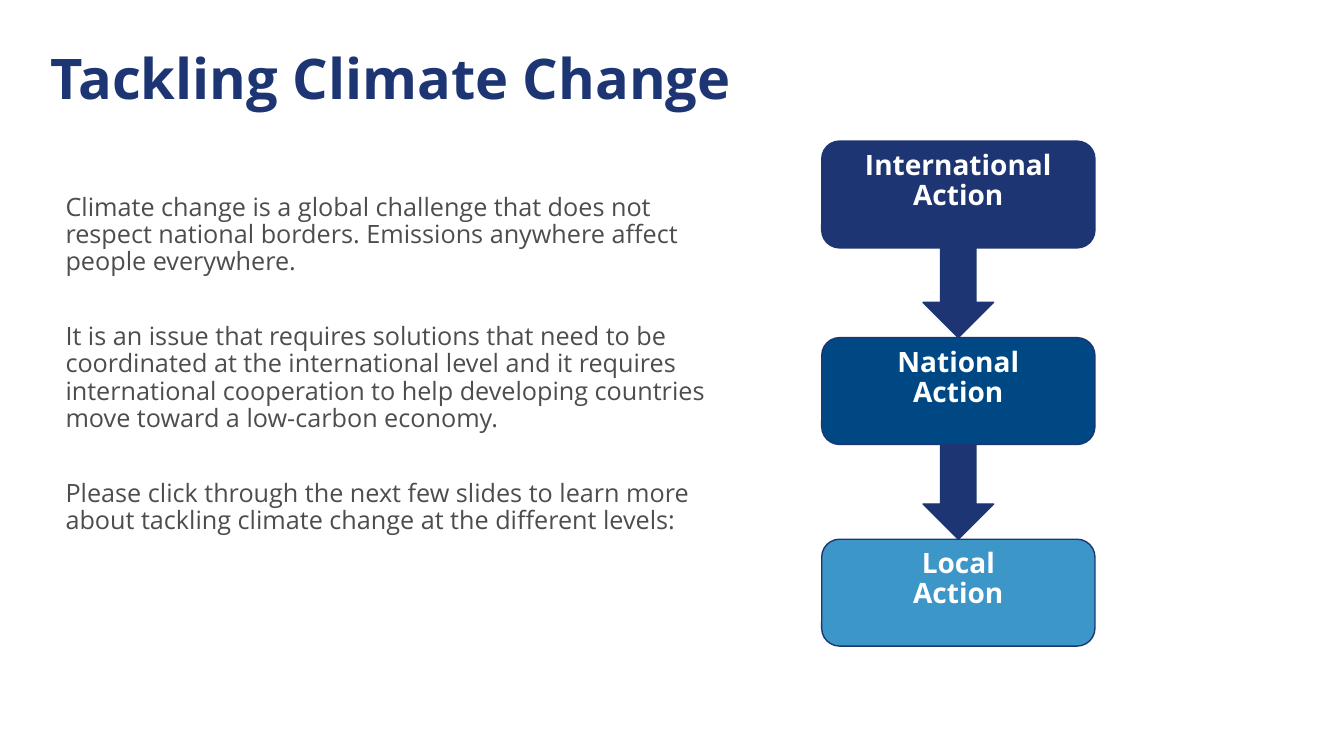
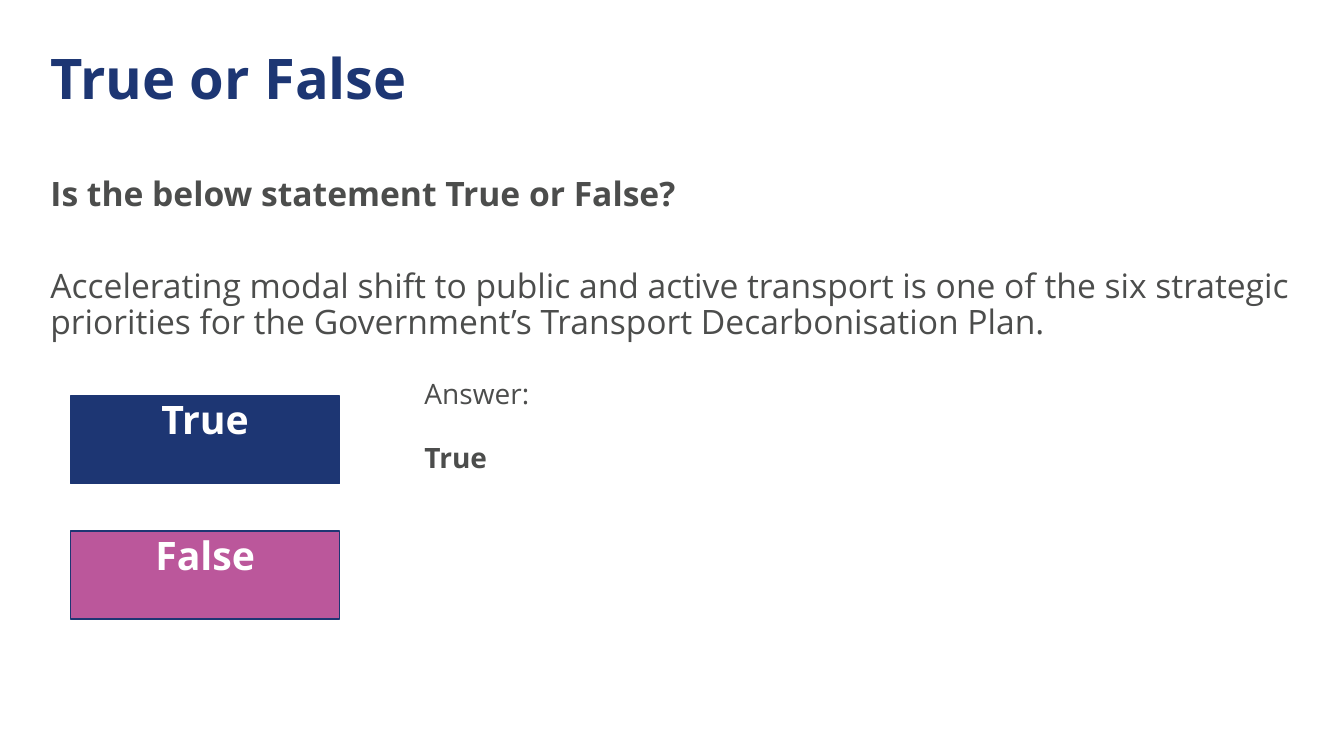
from dataclasses import dataclass

from pptx import Presentation
from pptx.dml.color import RGBColor
from pptx.enum.shapes import MSO_SHAPE as Shape
from pptx.enum.text import MSO_ANCHOR as Anchor, MSO_AUTO_SIZE as AutoSize, PP_ALIGN as Align
from pptx.oxml.xmlchemy import OxmlElement
from pptx.util import Inches, Pt


@dataclass(frozen=True)
class Theme:
    font: str = "Open Sans"
    navy: str = "1D3673"
    blue: str = "004884"
    sky: str = "3C96C8"
    pink: str = "BB579B"
    grey: str = "4C4D4C"
    white: str = "FFFFFF"
    title_size: int = 40
    button_size: int = 28
    question_size: int = 24
    label_size: int = 20
    body_size: int = 18
    line_spacing: float = 0.9


THEME = Theme()

TITLE_BOX = (0.5, 0.51, 12.33, 1.06)

CLIMATE = {
    "title": "Tackling Climate Change",
    "box": (0.65, 1.93, 6.4, 4.2),
    "paragraphs": [
        "Climate change is a global challenge that does not respect national borders. "
        "Emissions anywhere affect people everywhere.",
        "It is an issue that requires solutions that need to be coordinated at the "
        "international level and it requires international cooperation to help "
        "developing countries move toward a low-carbon economy.",
        "Please click through the next few slides to learn more about tackling climate "
        "change at the different levels:",
    ],
    "levels": [
        (["International Action"], THEME.navy, 1.4),
        (["National", "Action"], THEME.blue, 3.35),
        (["Local", "Action"], THEME.sky, 5.35),
    ],
}
LEVEL_LEFT, LEVEL_WIDTH, LEVEL_HEIGHT = 8.15, 2.71, 1.06
ARROW_WIDTH, ARROW_HEIGHT = 0.7, 0.94

QUIZ = {
    "title": "True or False",
    "box": (0.5, 1.76, 12.33, 4.84),
    "paragraphs": [
        "Is the below statement True or False?",
        "Accelerating modal shift to public and active transport is one of the six "
        "strategic priorities for the Government’s Transport Decarbonisation Plan.",
    ],
    "buttons": [("True", THEME.navy), ("False", THEME.pink)],
    "answer": ["Answer:", "True"],
    "answer_box": (4.21, 3.77, 8.62, 2.77),
}
BUTTON_LEFT, BUTTON_TOP, BUTTON_WIDTH, BUTTON_HEIGHT = 0.7, 3.93, 2.67, 0.87
BUTTON_PITCH = 1.34


def inches(box):
    return [Inches(length) for length in box]


def write(frame, texts, size, color, align=Align.LEFT, bold=(), gap=0, margin=None):
    frame.word_wrap = True
    frame.auto_size = AutoSize.NONE
    frame.vertical_anchor = Anchor.TOP
    if margin is not None:
        frame.margin_left = frame.margin_right = Inches(margin)
        frame.margin_top = frame.margin_bottom = Inches(margin)
    for index, text in enumerate(texts):
        paragraph = frame.paragraphs[0] if index == 0 else frame.add_paragraph()
        paragraph.text = text
        paragraph.alignment = align
        paragraph.line_spacing = THEME.line_spacing
        paragraph.space_before = Pt(gap if index else 0)
        paragraph.space_after = Pt(0)
        font = paragraph.font
        font.name = THEME.font
        font.size = Pt(size)
        font.bold = index in bold
        font.color.rgb = RGBColor.from_string(color)


def place(placeholder, box):
    placeholder.left, placeholder.top, placeholder.width, placeholder.height = inches(box)


def add_slide(presentation, content, size, gap, bold=()):
    slide = presentation.slides.add_slide(presentation.slide_layouts[1])
    title, body = slide.placeholders
    place(title, TITLE_BOX)
    write(title.text_frame, [content["title"]], THEME.title_size, THEME.navy, bold=(0,), margin=0)
    place(body, content["box"])
    write(body.text_frame, content["paragraphs"], size, THEME.grey, bold=bold, gap=gap, margin=0)
    for paragraph in body.text_frame.paragraphs:
        properties = paragraph._p.get_or_add_pPr()
        properties.set("marL", "0")
        properties.set("indent", "0")
        properties.insert_element_before(
            OxmlElement("a:buNone"), "a:tabLst", "a:defRPr", "a:extLst"
        )
    return slide


def add_block(slide, kind, box, fill, texts=(), size=THEME.label_size):
    shape = slide.shapes.add_shape(kind, *inches(box))
    shape.shadow.inherit = False
    shape.fill.solid()
    shape.fill.fore_color.rgb = RGBColor.from_string(fill)
    shape.line.color.rgb = RGBColor.from_string(THEME.navy)
    shape.line.width = Pt(1)
    write(shape.text_frame, texts, size, THEME.white, Align.CENTER, bold=range(len(texts)))


def build_climate(presentation):
    slide = add_slide(presentation, CLIMATE, THEME.body_size, gap=34)
    for texts, fill, top in CLIMATE["levels"]:
        box = (LEVEL_LEFT, top, LEVEL_WIDTH, LEVEL_HEIGHT)
        add_block(slide, Shape.ROUNDED_RECTANGLE, box, fill, texts)
    arrow_left = LEVEL_LEFT + (LEVEL_WIDTH - ARROW_WIDTH) / 2
    for _, _, next_top in CLIMATE["levels"][1:]:
        box = (arrow_left, next_top - ARROW_HEIGHT, ARROW_WIDTH, ARROW_HEIGHT)
        add_block(slide, Shape.DOWN_ARROW, box, THEME.navy)


def build_quiz(presentation):
    slide = add_slide(presentation, QUIZ, THEME.question_size, gap=40, bold=(0,))
    for index, (text, fill) in enumerate(QUIZ["buttons"]):
        box = (BUTTON_LEFT, BUTTON_TOP + index * BUTTON_PITCH, BUTTON_WIDTH, BUTTON_HEIGHT)
        add_block(slide, Shape.RECTANGLE, box, fill, [text], THEME.button_size)
    answer = slide.shapes.add_textbox(*inches(QUIZ["answer_box"]))
    write(answer.text_frame, QUIZ["answer"], THEME.label_size, THEME.grey, bold=(1,), gap=24, margin=0)


def main():
    presentation = Presentation()
    presentation.slide_width = Inches(13.33)
    presentation.slide_height = Inches(7.5)
    build_climate(presentation)
    build_quiz(presentation)
    presentation.save("out.pptx")


if __name__ == "__main__":
    main()
